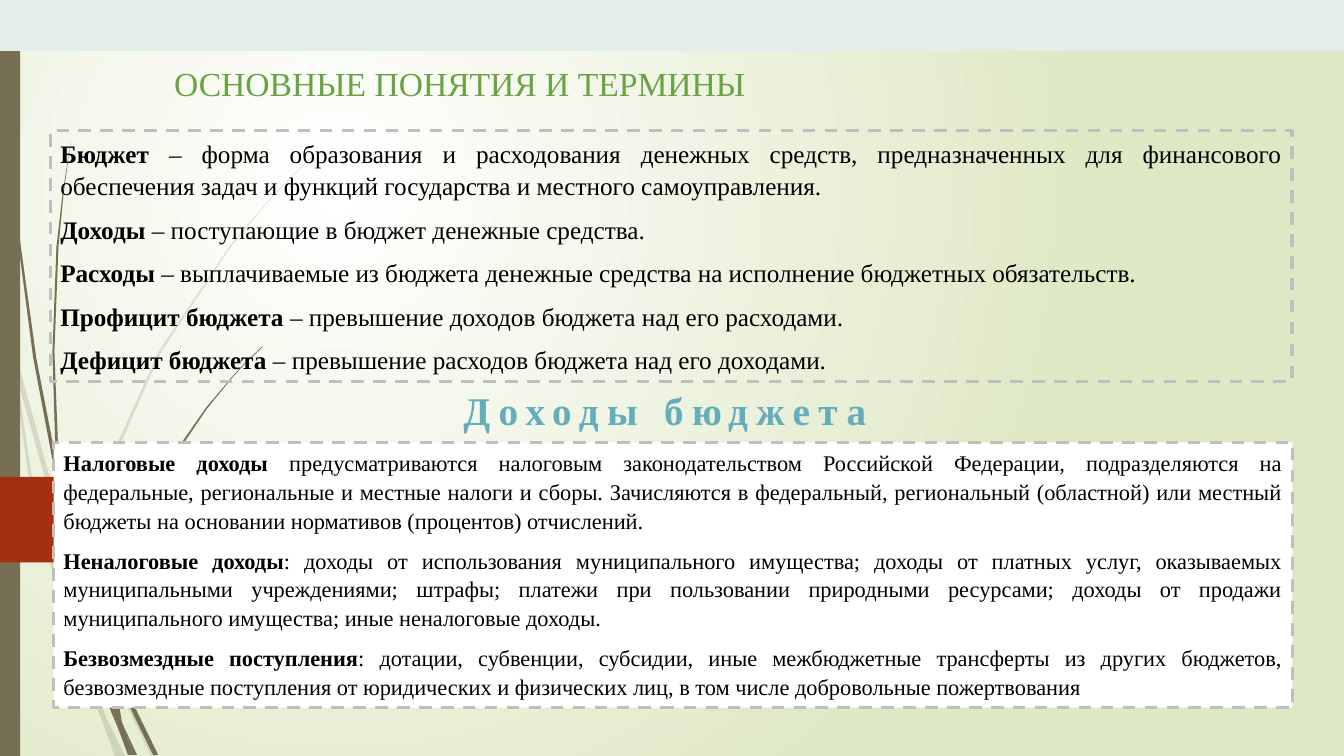
import pptx
import pptx.dml.color
import pptx.enum.dml
import pptx.enum.shapes
import pptx.enum.text
import pptx.oxml
import pptx.oxml.ns
import pptx.util
from lxml import etree

Cm, Pt = pptx.util.Cm, pptx.util.Pt
qn = pptx.oxml.ns.qn
ALIGN = pptx.enum.text.PP_ALIGN
ANCHOR = pptx.enum.text.MSO_ANCHOR
W, H = 33.87, 19.05
BROWN, RED, GREY, BAND = "766F54", "A53010", "BFBFBF", "E1EEE9"

# Outlines of the grass blades, in hundredths of an inch
PALE_BLADES = [
    [(11, 350), (9, 322), (0, 282), (0, 299), (10, 344)],
    [(58, 522), (84, 599), (85, 586), (62, 520), (14, 345), (17, 376)],
    [(92, 607), (88, 596), (88, 610), (123, 694), (150, 750), (155, 750), (127, 692)],
    [(119, 750), (124, 750), (105, 711)],
    [(93, 683), (70, 619), (31, 469), (17, 376), (11, 350), (28, 470), (65, 621),
     (92, 693), (101, 714), (99, 707)],
    [(84, 599), (87, 646), (93, 683), (96, 692), (105, 711), (103, 706), (91, 646),
     (88, 610), (88, 608)],
    [(88, 584), (110, 462), (160, 349), (229, 245), (268, 198), (290, 175), (312, 154),
     (312, 153), (289, 175), (268, 197), (228, 244), (158, 348), (107, 461), (85, 584),
     (85, 586), (88, 596)],
    [(101, 714), (114, 750), (119, 750)],
    [(96, 692), (93, 683), (99, 707), (101, 714), (119, 750), (105, 711)],
]
DARK_BLADES = [
    [(7, 110), (17, 233), (33, 355), (56, 477), (57, 481), (55, 457), (55, 453),
     (36, 355), (19, 232), (8, 109), (5, 48), (4, 0), (3, 0), (4, 48)],
    [(113, 649), (110, 641), (111, 656), (132, 708), (152, 749), (157, 749), (136, 706)],
    [(110, 691), (98, 657), (72, 556), (64, 505), (57, 477), (68, 557), (93, 659),
     (111, 708), (117, 722), (116, 717)],
    [(60, 472), (58, 453), (54, 349), (58, 245), (63, 193), (70, 141), (62, 193),
     (56, 245), (52, 349), (55, 449)],
    [(133, 749), (136, 749), (122, 719)],
    [(111, 633), (125, 552), (158, 476), (205, 406), (231, 374), (245, 359), (261, 344),
     (260, 344), (245, 358), (231, 373), (204, 405), (156, 474), (122, 551), (106, 631),
     (110, 641)],
    [(117, 722), (127, 749), (131, 749)],
    [(106, 645), (110, 691), (116, 706), (122, 719), (121, 716), (111, 656), (109, 651)],
    [(116, 706), (110, 691), (116, 717), (117, 722), (130, 749), (133, 749), (122, 719)],
]
RED_TAG = [(0, 473), (147, 473), (150, 474), (190, 513), (191, 515), (190, 517),
           (151, 556), (147, 558), (0, 558)]

# Each paragraph: bold term, plain explanation
TERMS = [
    ("Бюджет", " – форма образования и расходования денежных средств, предназначенных "
     "для финансового обеспечения задач и функций государства и местного самоуправления."),
    ("Доходы", " – поступающие в бюджет денежные средства."),
    ("Расходы", " – выплачиваемые из бюджета денежные средства на исполнение "
     "бюджетных обязательств."),
    ("Профицит бюджета ", "– превышение доходов бюджета над его расходами."),
    ("Дефицит бюджета ", "– превышение расходов бюджета над его доходами."),
]
INCOME = [
    ("Налоговые доходы ", "предусматриваются налоговым законодательством Российской "
     "Федерации, подразделяются на федеральные, региональные и местные налоги и сборы. "
     "Зачисляются в федеральный, региональный (областной) или местный бюджеты "
     "на основании нормативов (процентов) отчислений."),
    ("Неналоговые доходы", ": доходы от использования муниципального имущества; доходы "
     "от платных услуг, оказываемых муниципальными учреждениями; штрафы; платежи при "
     "пользовании природными ресурсами; доходы от продажи муниципального имущества; "
     "иные неналоговые доходы."),
    ("Безвозмездные поступления", ": дотации, субвенции, субсидии, иные межбюджетные "
     "трансферты из других бюджетов, безвозмездные поступления от юридических и "
     "физических лиц, в том числе добровольные пожертвования"),
]


def rgb(value):
    return pptx.dml.color.RGBColor.from_string(value)


def apply(obj, **values):
    for name, value in values.items():
        setattr(obj, name, value)


class Deck:
    font = "Times New Roman"

    def __init__(self):
        self.prs = pptx.Presentation()
        apply(self.prs, slide_width=Cm(W), slide_height=Cm(H))
        self.s = self.prs.slides.add_slide(self.prs.slide_layouts[6])

    def background(self, inner, outer):
        fill = self.s.background.fill
        fill.gradient()
        for stop, color in zip(fill.gradient_stops, (inner, outer)):
            stop.color.rgb = rgb(color)
        grad = next(self.s.element.iter(qn("a:gradFill")))
        grad.remove(grad.find(qn("a:lin")))
        glow = etree.SubElement(grad, qn("a:path"), {"path": "circle"})
        etree.SubElement(glow, qn("a:fillToRect"),
                         l="50000", t="50000", r="100000", b="100000")

    def paint(self, sp, fill=None, line=None, width=1.25, dash=None):
        sp.shadow.inherit = False
        for part, color in ((sp.fill, fill), (sp.line.fill, line)):
            if color:
                part.solid()
                part.fore_color.rgb = rgb(color)
            else:
                part.background()
        if line:
            apply(sp.line, width=Pt(width), dash_style=dash)

    def rect(self, box, **style):
        sp = self.s.shapes.add_shape(pptx.enum.shapes.MSO_SHAPE.RECTANGLE, *map(Cm, box))
        self.paint(sp, **style)
        return sp

    def outline(self, points, fill, alpha=None):
        builder = self.s.shapes.build_freeform(*points[0], scale=Cm(2.54) / 100)
        builder.add_line_segments(points[1:], close=True)
        sp = builder.convert_to_shape()
        self.paint(sp, fill)
        if alpha:
            color = next(sp.element.spPr.iter(qn("a:srgbClr")))
            etree.SubElement(color, qn("a:alpha"), val=str(alpha * 1000))

    def frame(self, sp, wrap, anchor):
        tf = sp.text_frame
        apply(tf, word_wrap=wrap, vertical_anchor=anchor,
              auto_size=pptx.enum.text.MSO_AUTO_SIZE.SHAPE_TO_FIT_TEXT)
        return tf

    def run(self, p, text, size, color="000000", bold=False):
        r = p.add_run()
        r.text = text
        apply(r.font, name=self.font, size=Pt(size), bold=bold)
        r.font.color.rgb = rgb(color)
        return r

    def definitions(self, box, items, size, fill=None):
        sp = self.rect(box, fill=fill, line=GREY, width=2.25,
                       dash=pptx.enum.dml.MSO_LINE.DASH)
        tf = self.frame(sp, True, ANCHOR.TOP)
        for i, (term, meaning) in enumerate(items):
            p = tf.add_paragraph() if i else tf.paragraphs[0]
            apply(p, alignment=ALIGN.JUSTIFY, line_spacing=1.07, space_after=Pt(8))
            self.run(p, term, size, bold=True)
            self.run(p, meaning, size)

    def heading(self, box, text, size, color, bold=False, spacing=0, anchor=ANCHOR.TOP):
        tf = self.frame(self.s.shapes.add_textbox(*map(Cm, box)), False, anchor)
        r = self.run(tf.paragraphs[0], text, size, color, bold)
        if spacing:
            r.font._element.set("spc", str(spacing * 100))


def main():
    deck = Deck()

    # Backdrop
    deck.background("FFFFFF", "DFE8C4")
    for blade in PALE_BLADES:
        deck.outline(blade, BROWN, alpha=20)
    for blade in DARK_BLADES:
        deck.outline(blade, BROWN)
    deck.rect((0, 0, 0.51, H), fill=BROWN)
    deck.outline(RED_TAG, RED)

    # Definitions and headings
    deck.definitions((1.27, 3.3, 31.29, 6.32), TERMS, 18)
    deck.definitions((1.35, 11.15, 31.22, 6.68), INCOME, 16, fill="FFFFFF")
    deck.heading((11.43, 9.6, 10.97, 1.45), "Доходы бюджета", 28, "65ADBB",
                 bold=True, spacing=6, anchor=ANCHOR.MIDDLE)
    deck.heading((4.14, 1.47, 15.06, 1.27), "ОСНОВНЫЕ ПОНЯТИЯ И ТЕРМИНЫ", 24, "6AA343")

    # Top band
    deck.rect((0, 0, W, 1.27), fill=BAND, line=BAND)

    deck.prs.save("out.pptx")


if __name__ == "__main__":
    main()
